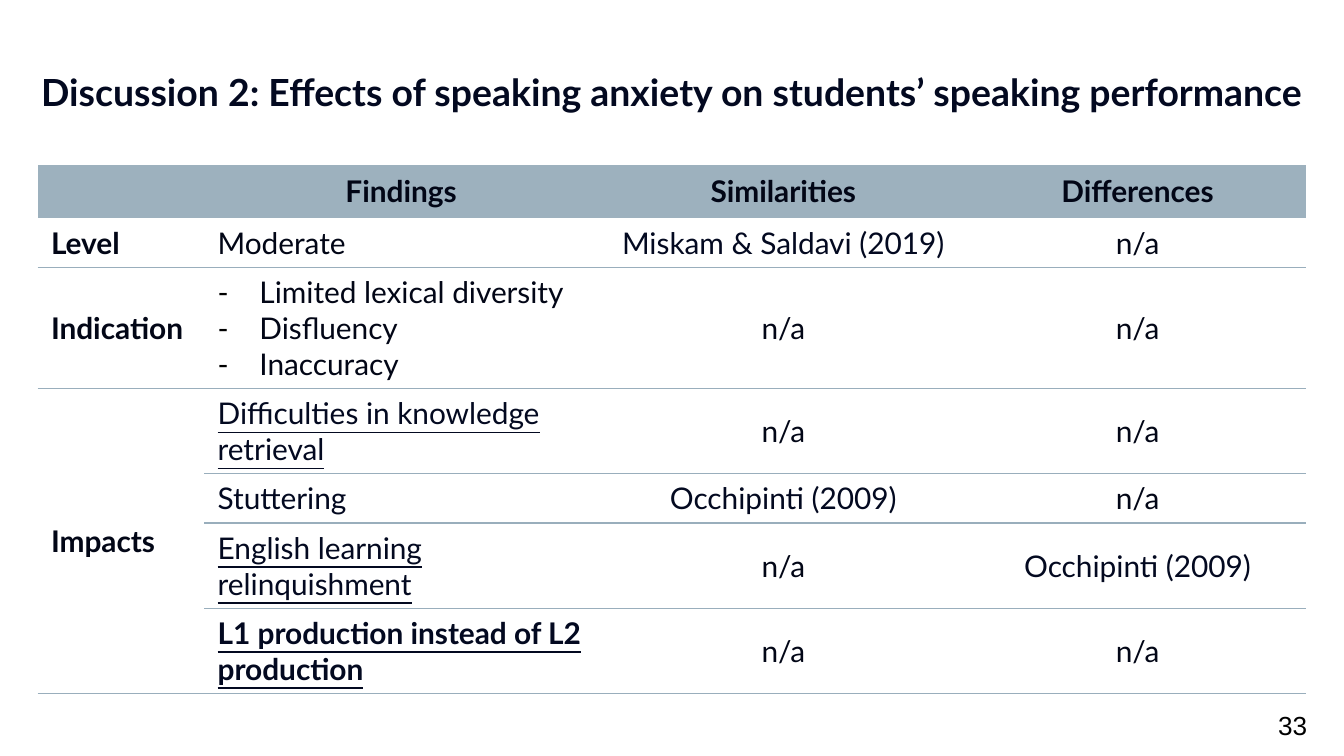
import pptx
import pptx.dml.color
import pptx.enum.text
import pptx.oxml
import pptx.oxml.ns
import pptx.util
from pptx.dml.color import RGBColor
from pptx.util import Cm

NAVY = RGBColor(0x03, 0x09, 0x20)
INK = RGBColor(0x02, 0x06, 0x16)
BLACK = RGBColor(0, 0, 0)
WHITE = RGBColor(0xFF, 0xFF, 0xFF)
HEADER_BLUE = RGBColor(0x9D, 0xB1, 0xBE)
RULE_BLUE = RGBColor(0x99, 0xAE, 0xBC)

LEFT = pptx.enum.text.PP_ALIGN.LEFT
CENTER = pptx.enum.text.PP_ALIGN.CENTER
MIDDLE = pptx.enum.text.MSO_ANCHOR.MIDDLE
NO_TABLE_STYLE = "{2D5ABB26-0587-4C30-8999-92F81FD0307C}"

HEADINGS = ["", "Findings", "Similarities", "Differences"]
INDICATIONS = ["Limited lexical diversity", "Disfluency", "Inaccuracy"]
ROWS = [
    ["Level", "Moderate", "Miskam & Saldavi (2019)", "n/a"],
    ["Indication", INDICATIONS, "n/a", "n/a"],
    ["Impacts", "Difficulties in knowledge retrieval", "n/a", "n/a"],
    ["", "Stuttering", "Occhipinti (2009)", "n/a"],
    ["", "English learning relinquishment", "n/a", "Occhipinti (2009)"],
    ["", "L1 production instead of L2 production", "n/a", "n/a"],
]
COLUMN_WIDTHS = [3.15, 7.44, 7.01, 6.38]
ROW_HEIGHTS = [0.94, 0.93, 2.26, 1.61, 0.93, 1.61, 1.61]
FIRST_IMPACT, LAST_ROW = 3, 6
UNDERLINED_ROWS = {3, 5, 6}


def add_run(para, text, size, color, font="Lato", bold=False, underline=False):
    span = para.add_run()
    span.text = text
    span.font.name = font
    span.font.size = pptx.util.Pt(size)
    span.font.bold = bold
    span.font.underline = underline
    span.font.color.rgb = color


def add_text(page, box, text, size, color, **style):
    frame = page.shapes.add_textbox(*box).text_frame
    frame.word_wrap = True
    frame.vertical_anchor = MIDDLE
    para = frame.paragraphs[0]
    para.alignment = CENTER
    add_run(para, text, size, color, **style)


def add_dash(para):
    """Give a paragraph a hanging dash bullet."""
    properties = para._p.get_or_add_pPr()
    properties.set("marL", str(Cm(0.79)))
    properties.set("indent", str(-Cm(0.79)))
    namespace = pptx.oxml.ns.nsdecls("a")
    properties.append(pptx.oxml.parse_xml(
        f'<a:buClr {namespace}><a:srgbClr val="{BLACK}"/></a:buClr>'))
    properties.append(pptx.oxml.parse_xml(
        f'<a:buFont {namespace} typeface="Lato"/>'))
    properties.append(pptx.oxml.parse_xml(
        f'<a:buChar {namespace} char="-"/>'))


def add_bottom_rule(cell):
    line = pptx.oxml.parse_xml(
        f'<a:lnB {pptx.oxml.ns.nsdecls("a")} w="{pptx.util.Pt(0.75)}">'
        f'<a:solidFill><a:srgbClr val="{RULE_BLUE}"/></a:solidFill></a:lnB>')
    cell._tc.get_or_add_tcPr().insert(0, line)


def fill_cell(cell, content, row, column):
    cell.fill.solid()
    cell.fill.fore_color.rgb = WHITE if row else HEADER_BLUE
    cell.vertical_anchor = MIDDLE

    finding = column == 1 and row > 0
    bold = row == 0 or column == 0 or (finding and row == LAST_ROW)
    underline = finding and row in UNDERLINED_ROWS
    is_listed = isinstance(content, list)
    lines = content if is_listed else [content]
    for index, text in enumerate(lines):
        frame = cell.text_frame
        para = frame.add_paragraph() if index else frame.paragraphs[0]
        para.alignment = CENTER if row == 0 or column > 1 else LEFT
        if is_listed:
            add_dash(para)
        if text:
            # Citations and impact findings take the title's navy
            cited = text.endswith(")")
            color = NAVY if cited or (finding and row >= FIRST_IMPACT) else INK
            add_run(para, text, 16, color, bold=bold, underline=underline)

    # Rules run under every body row, but not inside the merged label
    inside_label = column == 0 and FIRST_IMPACT < row < LAST_ROW
    if row and not inside_label:
        add_bottom_rule(cell)


def add_findings_table(page, box):
    content = [HEADINGS] + ROWS
    frame = page.shapes.add_table(len(content), len(HEADINGS), *box)
    table = frame.table
    table.horz_banding = False
    table._tbl.tblPr.find(
        pptx.oxml.ns.qn("a:tableStyleId")).text = NO_TABLE_STYLE
    for column, width in zip(table.columns, COLUMN_WIDTHS):
        column.width = Cm(width)
    for row, height in zip(table.rows, ROW_HEIGHTS):
        row.height = Cm(height)
    table.cell(FIRST_IMPACT, 0).merge(table.cell(LAST_ROW, 0))
    for row, values in enumerate(content):
        for column, value in enumerate(values):
            fill_cell(table.cell(row, column), value, row, column)


def add_title(page, box):
    page.shapes.title.left, page.shapes.title.top = box[:2]
    page.shapes.title.width, page.shapes.title.height = box[2:]


def main():
    deck = pptx.Presentation()
    deck.slide_width, deck.slide_height = Cm(25.4), Cm(14.29)
    page = deck.slides.add_slide(deck.slide_layouts[6])

    # Title
    add_text(page, (Cm(0), Cm(1.04), Cm(25.4), Cm(1.37)),
             "Discussion 2: Effects of speaking anxiety on students’ "
             "speaking performance", 20, NAVY, bold=True)
    # Findings compared with earlier studies
    add_findings_table(page, (Cm(0.71), Cm(3.11), Cm(23.98), Cm(9.89)))
    # Page number
    add_text(page, (Cm(23.72), Cm(13.28), Cm(1.42), Cm(0.86)),
             "33", 14, BLACK, font="Arial")

    deck.save("out.pptx")


if __name__ == "__main__":
    main()
